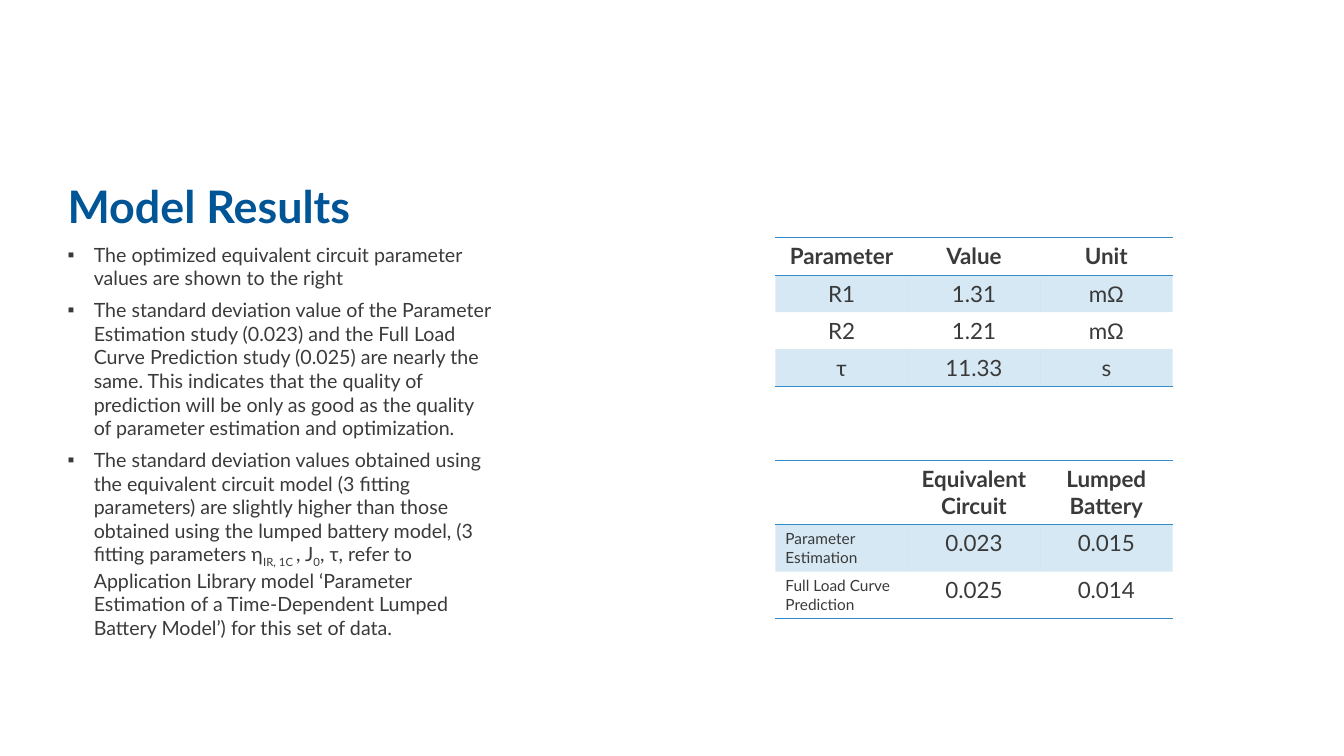
from lxml import etree
from pptx import Presentation
from pptx.dml.color import RGBColor
from pptx.enum.text import MSO_ANCHOR, PP_ALIGN
from pptx.oxml.ns import qn
from pptx.util import Inches, Pt

BOTTOM, TOP = MSO_ANCHOR.BOTTOM, MSO_ANCHOR.TOP
CENTER, LEFT = PP_ALIGN.CENTER, PP_ALIGN.LEFT

NAVY = RGBColor(0x00, 0x55, 0x96)
CHARCOAL = RGBColor(0x39, 0x3A, 0x39)
BLUE = RGBColor(0x36, 0x8C, 0xCB)
FONT = "Lato"
SYMBOL_FONT = "Arial"
PLAIN_TABLE_STYLE = "{2D5ABB26-0587-4C30-8999-92F81FD0307C}"

# Each point is a list of (text, is_subscript) spans.
POINTS = [
    [("The optimized equivalent circuit parameter values are shown to the right", False)],
    [("The standard deviation value of the Parameter Estimation study (0.023) and the "
      "Full Load Curve Prediction study (0.025) are nearly the same. This indicates that "
      "the quality of prediction will be only as good as the quality of parameter "
      "estimation and optimization.", False)],
    [("The standard deviation values obtained using the equivalent circuit model "
      "(3 fitting parameters) are slightly higher than those obtained using the lumped "
      "battery model, (3 fitting parameters ƞ", False),
     ("IR, 1C ", True), (", J", False), ("0", True),
     (", τ, refer to Application Library model ‘Parameter Estimation of a "
      "Time-Dependent Lumped Battery Model’) for this set of data.", False)],
]
PARAMETERS = [
    ["Parameter", "Value", "Unit"],
    ["R1", "1.31", "mΩ"],
    ["R2", "1.21", "mΩ"],
    ["τ", "11.33", "s"],
]
DEVIATIONS = [
    ["", "Equivalent Circuit", "Lumped Battery"],
    ["Parameter Estimation", "0.023", "0.015"],
    ["Full Load Curve Prediction", "0.025", "0.014"],
]


def style(font, size, color=CHARCOAL, bold=False, name=FONT):
    font.size, font.bold, font.name = Pt(size), bold, name
    font.color.rgb = color


def add_text_frame(slide, left, top, width, height, anchor):
    box = slide.shapes.add_textbox(Inches(left), Inches(top), Inches(width), Inches(height))
    frame = box.text_frame
    frame.word_wrap = True
    frame.margin_left = 0
    frame.vertical_anchor = anchor
    return frame


def add_title(slide, left, top, width, height):
    frame = add_text_frame(slide, left, top, width, height, BOTTOM)
    frame.text = "Model Results"
    frame.paragraphs[0].line_spacing = 0.9
    style(frame.paragraphs[0].runs[0].font, 32, NAVY, bold=True)


def add_bullet(para):
    properties = para._p.get_or_add_pPr()
    properties.set("marL", str(Inches(0.26)))
    properties.set("indent", str(-Inches(0.26)))
    etree.SubElement(properties, qn("a:buFont"), typeface=SYMBOL_FONT)
    etree.SubElement(properties, qn("a:buChar"), char="▪")


def add_points(slide, left, top, width, height):
    frame = add_text_frame(slide, left, top, width, height, TOP)
    for index, spans in enumerate(POINTS):
        para = frame.add_paragraph() if index else frame.paragraphs[0]
        add_bullet(para)
        if index:
            para.space_before = Pt(6)
        for text, is_subscript in spans:
            span = para.add_run()
            span.text = text
            style(span.font, 14)
            if is_subscript:
                span.font._element.set("baseline", "-25000")


def add_rule(cell, side, visible):
    line = etree.SubElement(cell._tc.get_or_add_tcPr(), qn(f"a:{side}"), w=str(Pt(1)))
    if visible:
        fill = etree.SubElement(line, qn("a:solidFill"))
        etree.SubElement(fill, qn("a:srgbClr"), val=str(BLUE))
    else:
        etree.SubElement(line, qn("a:noFill"))


def fill_cell(cell, shaded):
    if not shaded:
        cell.fill.background()
        return
    cell.fill.solid()
    cell.fill.fore_color.rgb = BLUE
    color = cell._tc.tcPr.find(qn("a:solidFill")).find(qn("a:srgbClr"))
    etree.SubElement(color, qn("a:alpha"), val="20000")


def write_cell(cell, text, size, bold, alignment):
    para = cell.text_frame.paragraphs[0]
    para.alignment = alignment
    for part in ([text[:-1], "Ω"] if text.endswith("Ω") else [text]):
        span = para.add_run()
        span.text = part
        style(span.font, size, bold=bold, name=SYMBOL_FONT if part == "Ω" else FONT)


def add_ruled_table(slide, left, top, width, rows, header_height, row_height, row_labels=False):
    """Draw a table ruled around its header and at its foot; row_labels makes column one small."""
    height = header_height + row_height * (len(rows) - 1)
    frame = slide.shapes.add_table(len(rows), len(rows[0]), Inches(left), Inches(top),
                                   Inches(width), Inches(height))
    table = frame.table
    table.first_row = table.horz_banding = False
    table._tbl.tblPr.find(qn("a:tableStyleId")).text = PLAIN_TABLE_STYLE
    ruled_edges = {0, 1, len(rows)}
    for row_index, texts in enumerate(rows):
        is_header = row_index == 0
        table.rows[row_index].height = Inches(header_height if is_header else row_height)
        for column_index, text in enumerate(texts):
            cell = table.cell(row_index, column_index)
            is_label = row_labels and column_index == 0 and not is_header
            if text:
                write_cell(cell, text, 11 if is_label else 16, is_header,
                           LEFT if is_label else CENTER)
            add_rule(cell, "lnT", row_index in ruled_edges)
            add_rule(cell, "lnB", row_index + 1 in ruled_edges)
            fill_cell(cell, shaded=row_index % 2 == 1)


def build_results_slide(deck):
    slide = deck.slides.add_slide(deck.slide_layouts[6])
    add_title(slide, 0.67, 1.19, 4.3, 1.17)
    add_points(slide, 0.67, 2.36, 4.32, 4.61)
    add_ruled_table(slide, 7.69, 2.36, 3.94, PARAMETERS, 0.37, 0.36)
    add_ruled_table(slide, 7.69, 4.57, 3.94, DEVIATIONS, 0.63, 0.46, row_labels=True)


def main():
    deck = Presentation()
    deck.slide_width, deck.slide_height = Inches(13.33), Inches(7.5)
    build_results_slide(deck)
    deck.save("out.pptx")


if __name__ == "__main__":
    main()
